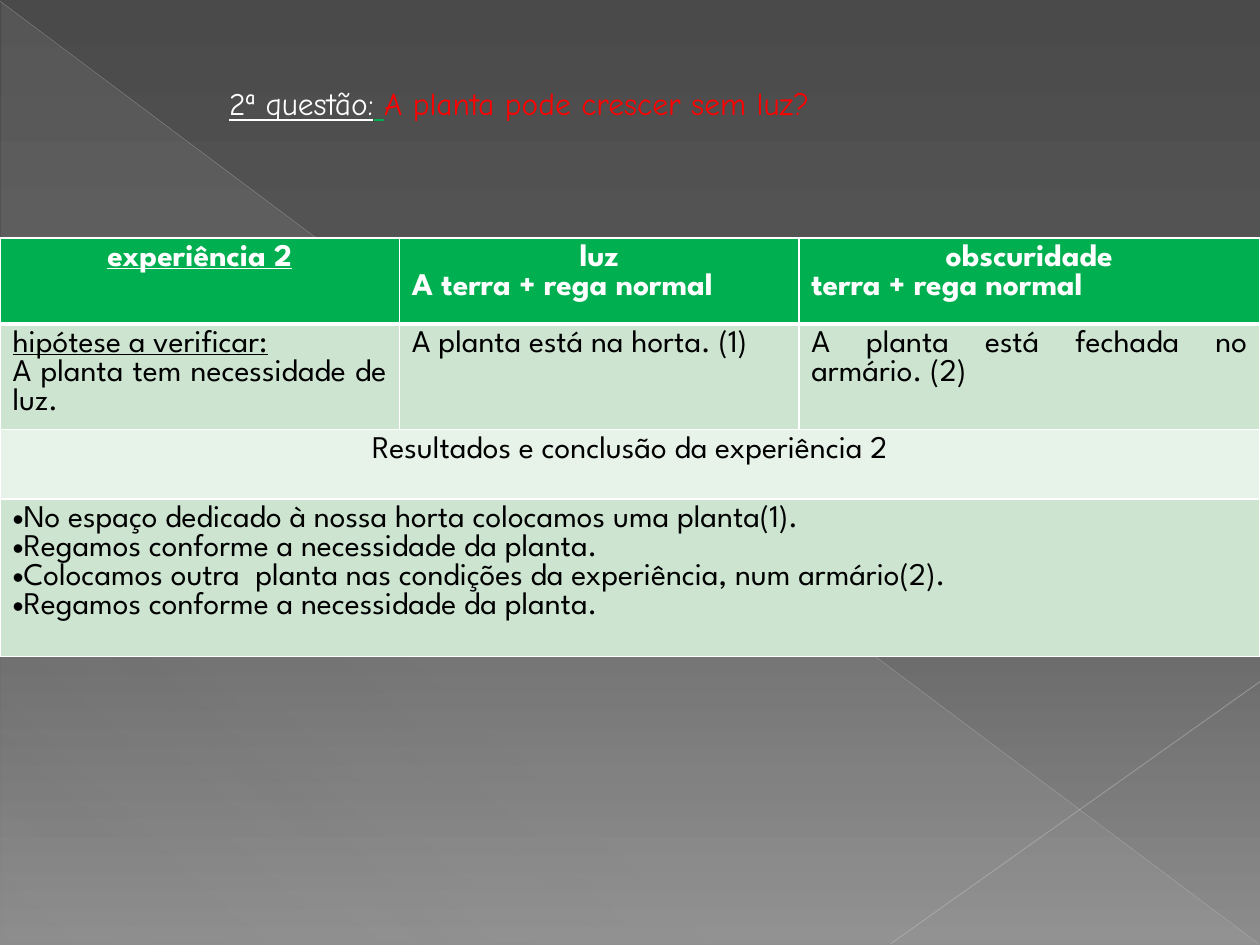
from dataclasses import dataclass

from lxml import etree
from pptx import Presentation
from pptx import util as u
from pptx.dml.color import RGBColor
from pptx.enum import shapes, text
from pptx.oxml.ns import qn

CENTER, JUSTIFY = text.PP_ALIGN.CENTER, text.PP_ALIGN.JUSTIFY


@dataclass(frozen=True)
class Theme:
    title_font: str = "Comic Neue"
    body_font: str = "League Spartan"
    size: int = 18
    white: str = "FFFFFF"
    black: str = "000000"
    red: str = "FF0000"
    green: str = "00B050"
    band: str = "CCE4D0"
    pale: str = "E7F2E9"
    backdrop: tuple = ((0, "4A4A4A", 100), (60, "626262", 100), (100, "8C8C8C", 100))
    sheen: tuple = ((0, "D2D2D2", 10), (70, "D2D2D2", 8), (100, "D2D2D2", 1))


def sub(parent, tag, **attrs):
    return etree.SubElement(parent, qn(tag), {k: str(v) for k, v in attrs.items()})


def add_color(parent, color, opacity=100):
    clr = sub(parent, "a:srgbClr", val=color)
    if opacity < 100:
        sub(clr, "a:alpha", val=opacity * 1000)


def use_gradient(props, stops, angle):
    solid = props.find(qn("a:solidFill"))
    grad = etree.Element(qn("a:gradFill"), rotWithShape="1")
    stop_list = sub(grad, "a:gsLst")
    for pos, color, opacity in stops:
        add_color(sub(stop_list, "a:gs", pos=pos * 1000), color, opacity)
    sub(grad, "a:lin", ang=angle * 60000, scaled=0)
    props.replace(solid, grad)


class SlideBuilder:
    def __init__(self, prs, theme):
        self.theme = theme
        self.s = prs.slides.add_slide(prs.slide_layouts[6])

    def background(self, stops, angle):
        self.s.background.fill.solid()
        use_gradient(next(self.s.element.iter(qn("p:bgPr"))), stops, angle)

    def triangle(self, left, top, width, height, stops, angle):
        sp = self.s.shapes.add_shape(
            shapes.MSO_SHAPE.RIGHT_TRIANGLE,
            u.Inches(left), u.Inches(top), u.Inches(width), u.Inches(height))
        sp.shadow.inherit = False
        sp.line.fill.background()
        sp.fill.solid()
        use_gradient(sp.element.spPr, stops, angle)

    def line(self, start, end, color, width, opacity):
        cx = self.s.shapes.add_connector(
            shapes.MSO_CONNECTOR.STRAIGHT, *(u.Inches(v) for v in (*start, *end)))
        cx.line.width = u.Pt(width)
        cx.line.color.rgb = RGBColor.from_string(color)
        clr = next(cx.element.spPr.iter(qn("a:srgbClr")))
        sub(clr, "a:alpha", val=opacity * 1000)
        sub(cx.element.spPr, "a:effectLst")

    def run(self, p, words, font, color, bold=False, underline=False):
        r = p.add_run()
        r.text = words
        r.font.name = font
        r.font.size = u.Pt(self.theme.size)
        r.font.bold = bold
        r.font.underline = underline
        r.font.color.rgb = RGBColor.from_string(color)

    def title(self, left, top, width, height, runs):
        sp = self.s.shapes.add_textbox(
            u.Inches(left), u.Inches(top), u.Inches(width), u.Inches(height))
        tf = sp.text_frame
        tf.word_wrap = True
        tf.auto_size = text.MSO_AUTO_SIZE.SHAPE_TO_FIT_TEXT
        tf.vertical_anchor = text.MSO_ANCHOR.MIDDLE
        for words, color, underline in runs:
            self.run(tf.paragraphs[0], words, self.theme.title_font, color,
                     underline=underline)

    def table(self, left, top, col_widths, row_heights):
        frame = self.s.shapes.add_table(
            len(row_heights), len(col_widths), u.Inches(left), u.Inches(top),
            u.Inches(sum(col_widths)), u.Inches(sum(row_heights)))
        table = frame.table
        table.first_row = table.horz_banding = False
        for col, width in zip(table.columns, col_widths):
            col.width = u.Inches(width)
        for row, height in zip(table.rows, row_heights):
            row.height = u.Inches(height)
        return table

    def cell_style(self, cell, fill, top=1, bottom=1):
        tcPr = cell._tc.get_or_add_tcPr()
        for side, width in zip("LRTB", (1, 1, top, bottom)):
            ln = sub(tcPr, f"a:ln{side}", w=u.Pt(width))
            add_color(sub(ln, "a:solidFill"), self.theme.white)
        cell.fill.solid()
        cell.fill.fore_color.rgb = RGBColor.from_string(fill)

    def cell_text(self, cell, paragraphs, color, bold=False, bullet=False):
        tf = cell.text_frame
        for i, (words, align, underline) in enumerate(paragraphs):
            p = tf.add_paragraph() if i else tf.paragraphs[0]
            p.alignment = align
            if bullet:
                pPr = p._p.get_or_add_pPr()
                sub(pPr, "a:buFont", typeface="Arial")
                sub(pPr, "a:buChar", char="•")
            self.run(p, words, self.theme.body_font, color, bold, underline)


def main():
    theme = Theme()
    prs = Presentation()
    prs.slide_width, prs.slide_height = u.Inches(10), u.Inches(7.5)
    b = SlideBuilder(prs, theme)

    b.background(theme.backdrop, 90)
    b.triangle(0.01, 0.02, 9.99, 7.48, theme.sheen, 133)
    b.line((0, 0.01), (9.99, 7.49), "BFBFBF", 0.39, 35)
    b.line((10, 5.41), (7.07, 7.49), "C6C6C6", 0.47, 45)

    header = [
        [("experiência 2", CENTER, True)],
        [("luz", CENTER, False), ("A terra + rega normal", None, False)],
        [("obscuridade", CENTER, False), ("terra + rega normal", None, False)],
    ]
    setup = [
        [("hipótese a verificar:", JUSTIFY, True),
         ("A planta tem necessidade de luz.", JUSTIFY, False)],
        [("A planta está na horta. (1)", JUSTIFY, False)],
        [("A planta está fechada no armário. (2)", JUSTIFY, False)],
    ]
    results = [[("Resultados e conclusão da experiência 2", CENTER, False)]]
    watering = "Regamos conforme a necessidade da planta."
    steps = [[(words, None, False) for words in (
        "No espaço dedicado à nossa horta colocamos uma planta(1).",
        watering,
        "Colocamos outra  planta nas condições da experiência, num armário(2).",
        watering,
    )]]
    rows = [
        (header, theme.green, theme.white, 1, 3),
        (setup, theme.band, theme.black, 3, 1),
        (results, theme.pale, theme.black, 1, 1),
        (steps, theme.band, theme.black, 1, 1),
    ]

    table = b.table(0, 1.89, (3.17, 3.17, 3.66), (0.68, 0.84, 0.55, 1.25))
    for i, (cells, fill, color, top, bottom) in enumerate(rows):
        for j in range(3):
            b.cell_style(table.cell(i, j), fill, top, bottom)
        if len(cells) == 1:
            table.cell(i, 0).merge(table.cell(i, 2))
        for j, paragraphs in enumerate(cells):
            b.cell_text(table.cell(i, j), paragraphs, color,
                        bold=cells is header, bullet=cells is steps)

    b.title(1.72, 0.62, 5.7, 0.4, [
        ("2ª questão:", theme.white, True),
        (" ", theme.green, True),
        ("A planta pode crescer sem luz?", theme.red, False),
    ])
    prs.save("out.pptx")


if __name__ == "__main__":
    main()
